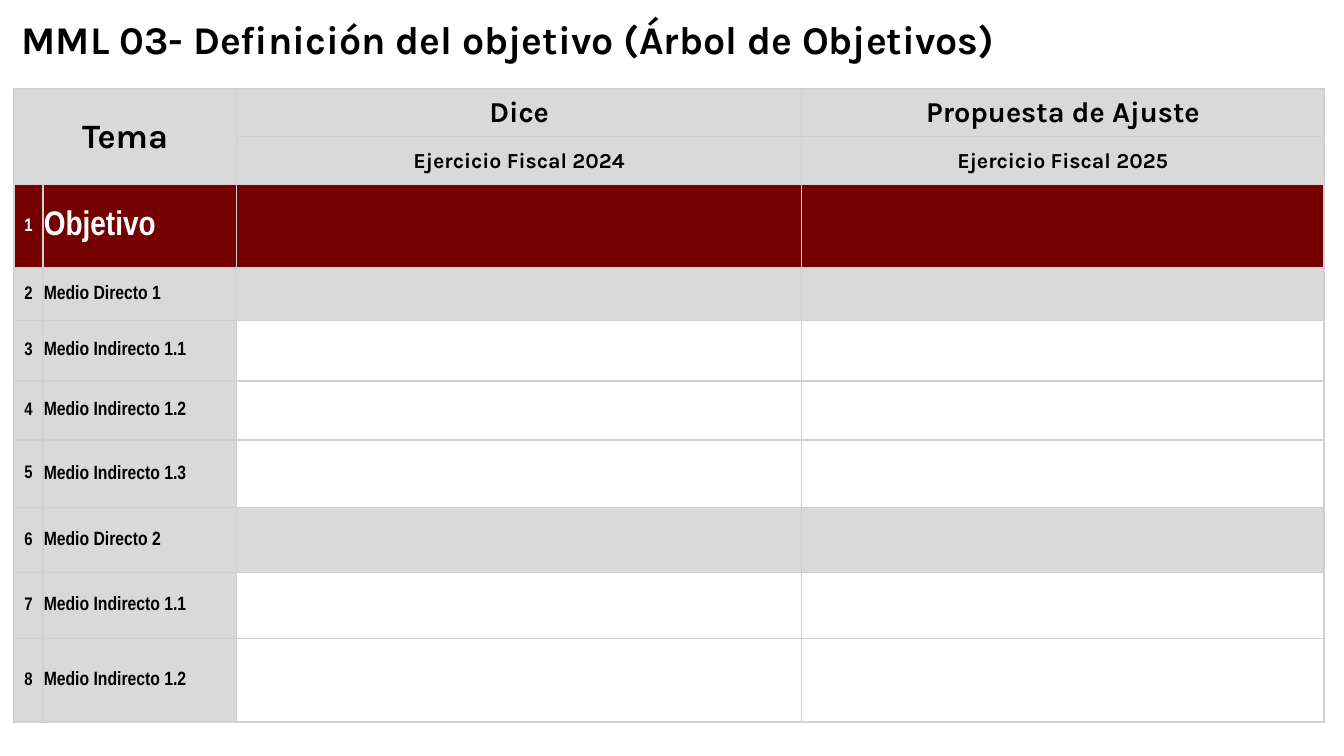
import pptx
import pptx.util
import pptx.dml.color
import pptx.enum.text
import pptx.oxml.ns
import lxml.etree
from dataclasses import dataclass

Inches, Pt = pptx.util.Inches, pptx.util.Pt
ALIGN = pptx.enum.text.PP_ALIGN
MIDDLE = pptx.enum.text.MSO_ANCHOR.MIDDLE

# Content
TITLE = "MML 03- Definición del objetivo (Árbol de Objetivos)"
TOPIC = "Tema"
HEADINGS = [("Dice", "Ejercicio Fiscal 2024"),
            ("Propuesta de Ajuste", "Ejercicio Fiscal 2025")]
TOPICS = [  # label, kind, row height
    ("Objetivo", "goal", 1.09),
    ("Medio Directo 1", "direct", 0.68),
    ("Medio Indirecto 1.1", "indirect", 0.79),
    ("Medio Indirecto 1.2", "indirect", 0.77),
    ("Medio Indirecto 1.3", "indirect", 0.88),
    ("Medio Directo 2", "direct", 0.84),
    ("Medio Indirecto 1.1", "indirect", 0.86),
    ("Medio Indirecto 1.2", "indirect", 1.09),
]
COLUMN_WIDTHS = [0.38, 2.52, 7.36, 6.8]
HEADER_HEIGHTS = [0.62, 0.62]


@dataclass(frozen=True)
class Theme:
    heading_font: str = "Karla"
    body_font: str = "Arial Narrow"
    black: str = "000000"
    white: str = "FFFFFF"
    gray: str = "D9D9D9"
    maroon: str = "740000"
    border: str = "D1D1D1"
    border_width: float = 1.5
    title_size: float = 36.8
    large_size: float = 32
    heading_size: float = 27
    year_size: float = 20
    number_size: float = 17
    label_size: float = 18


THEME = Theme()


def rgb(color):
    return pptx.dml.color.RGBColor.from_string(color)


def write(para, text, size, font, color, align=ALIGN.LEFT):
    para.text = text
    para.alignment = align
    for span in para.runs:
        span.font.name = font
        span.font.size = Pt(size)
        span.font.bold = True
        span.font.color.rgb = rgb(color)


def add_borders(cell):
    qn = pptx.oxml.ns.qn
    properties = cell._tc.get_or_add_tcPr()
    for side in ("lnL", "lnR", "lnT", "lnB"):
        line = lxml.etree.SubElement(properties, qn(f"a:{side}"), w=str(Pt(THEME.border_width)))
        fill = lxml.etree.SubElement(line, qn("a:solidFill"))
        lxml.etree.SubElement(fill, qn("a:srgbClr"), val=THEME.border)


def style_cell(cell, color):
    cell.vertical_anchor = MIDDLE
    cell.margin_left = cell.margin_right = cell.margin_top = Inches(0.01)
    cell.margin_bottom = 0
    add_borders(cell)
    if color:
        cell.fill.solid()
        cell.fill.fore_color.rgb = rgb(color)
    else:
        cell.fill.background()


def add_title(page):
    box = page.shapes.add_textbox(Inches(0.18), 0, Inches(15.09), Inches(1.1))
    frame = box.text_frame
    frame.word_wrap = True
    frame.vertical_anchor = MIDDLE
    para = frame.paragraphs[0]
    write(para, TITLE, THEME.title_size, THEME.heading_font, THEME.black)
    para.line_spacing = 0.9


def add_goal_table(page):
    heights = HEADER_HEIGHTS + [height for _, _, height in TOPICS]
    frame = page.shapes.add_table(len(heights), len(COLUMN_WIDTHS), Inches(0.18), Inches(1.16),
                                  Inches(sum(COLUMN_WIDTHS)), Inches(sum(heights)))
    table = frame.table
    table.first_row = table.horz_banding = False
    for column, width in zip(table.columns, COLUMN_WIDTHS):
        column.width = Inches(width)
    for row, height in zip(table.rows, heights):
        row.height = Inches(height)

    def heading(row, column, text, size):
        write(table.cell(row, column).text_frame.paragraphs[0], text, size,
              THEME.heading_font, THEME.black, ALIGN.CENTER)

    # Header rows
    for row in range(len(HEADER_HEIGHTS)):
        for column in range(len(COLUMN_WIDTHS)):
            style_cell(table.cell(row, column), THEME.gray)
    table.cell(0, 0).merge(table.cell(1, 1))
    heading(0, 0, TOPIC, THEME.large_size)
    for column, (name, year) in enumerate(HEADINGS, start=2):
        heading(0, column, name, THEME.heading_size)
        heading(1, column, year, THEME.year_size)

    # Topic rows
    for number, (label, kind, _) in enumerate(TOPICS, start=1):
        cells = table.rows[number + 1].cells
        goal = kind == "goal"
        label_fill = THEME.maroon if goal else THEME.gray
        entry_fill = None if kind == "indirect" else label_fill
        for cell, color in zip(cells, [label_fill] * 2 + [entry_fill] * 2):
            style_cell(cell, color)
        ink = THEME.white if goal else THEME.black
        write(cells[0].text_frame.paragraphs[0], str(number), THEME.number_size,
              THEME.body_font, ink, ALIGN.CENTER)
        write(cells[1].text_frame.paragraphs[0], label,
              THEME.large_size if goal else THEME.label_size, THEME.body_font, ink)


def main():
    deck = pptx.Presentation()
    deck.slide_width, deck.slide_height = Inches(17.5), Inches(9.84)
    page = deck.slides.add_slide(deck.slide_layouts[6])
    add_title(page)
    add_goal_table(page)
    deck.save("out.pptx")


if __name__ == "__main__":
    main()
